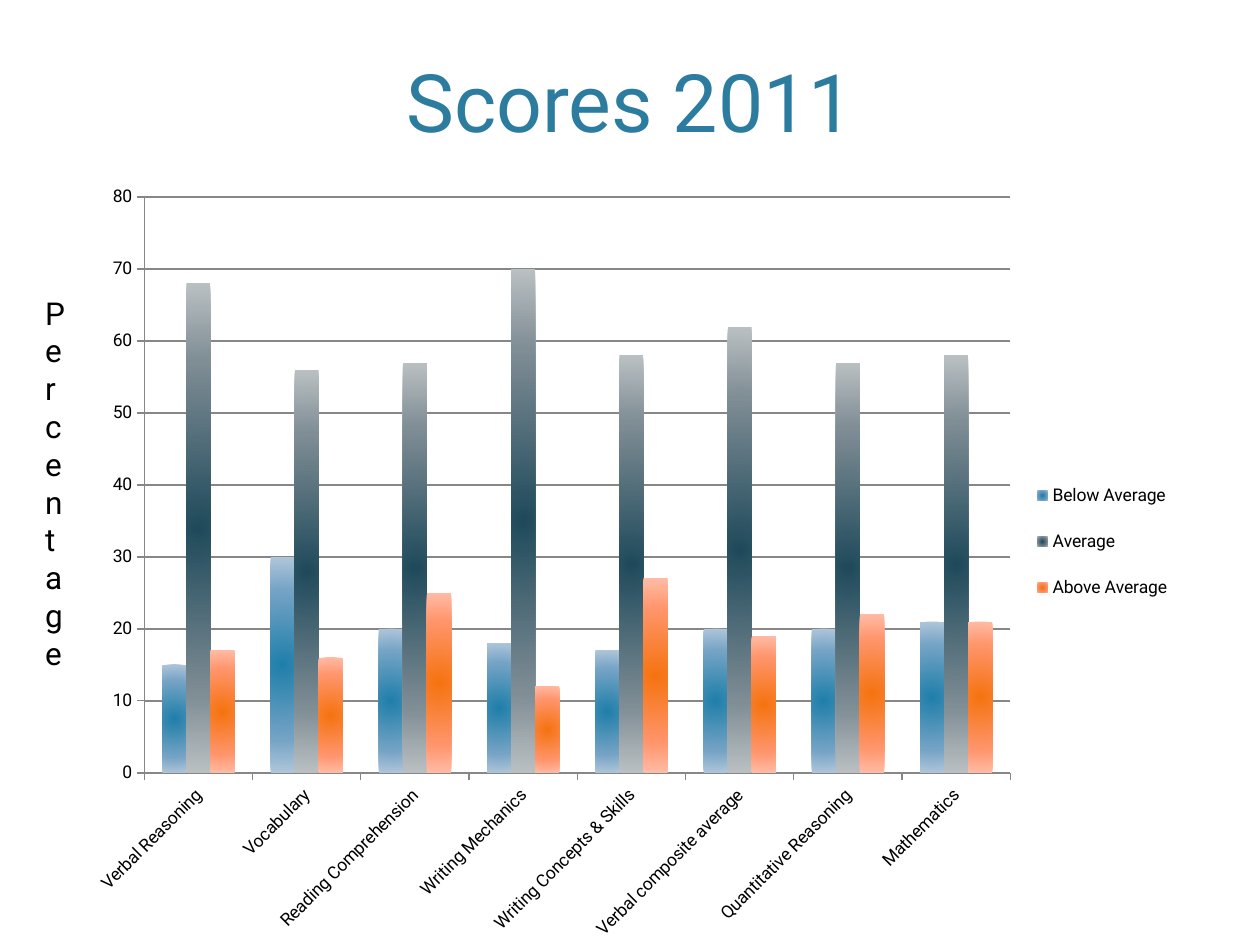
from dataclasses import dataclass

from lxml import etree
from pptx import Presentation
from pptx.chart.chart import Chart
from pptx.chart.data import CategoryChartData
from pptx.chart.series import BarSeries
from pptx.dml.color import RGBColor
from pptx.enum.chart import XL_CHART_TYPE, XL_LEGEND_POSITION, XL_TICK_MARK
from pptx.enum.text import MSO_ANCHOR, MSO_AUTO_SIZE, PP_ALIGN
from pptx.oxml import parse_xml
from pptx.oxml.ns import nsdecls, qn
from pptx.util import Pt

COLUMNS = XL_CHART_TYPE.COLUMN_CLUSTERED
LEGEND_RIGHT = XL_LEGEND_POSITION.RIGHT
TICK_OUTSIDE = XL_TICK_MARK.OUTSIDE
ANCHOR_BOTTOM = MSO_ANCHOR.BOTTOM
FIT_SHAPE = MSO_AUTO_SIZE.SHAPE_TO_FIT_TEXT
CENTER = PP_ALIGN.CENTER
TITLE_ONLY = 5

FONT = "Roboto"
TITLE_COLOR = "2C7C9F"
TEXT_COLOR = "000000"
LINE_COLOR = "878787"

CATEGORIES = [
    "Verbal Reasoning",
    "Vocabulary",
    "Reading Comprehension",
    "Writing Mechanics",
    "Writing Concepts & Skills",
    "Verbal composite average",
    "Quantitative Reasoning",
    "Mathematics",
]


@dataclass(frozen=True)
class Area:
    left: float
    top: float
    width: float
    height: float


@dataclass(frozen=True)
class ScoreBand:
    name: str
    values: tuple[int, ...]
    center: str
    middle: str
    edge: str


TITLE_AREA = Area(43.2, 8.6, 633.6, 79.9)
CHART_AREA = Area(43.2, 97.9, 633.6, 451.4)
PLOT_AREA = Area(82.5, 112.6, 494.9, 329.1)
LEGEND_AREA = Area(585.3, 262.6, 89, 94)
CAPTION_AREA = Area(18.7, 164.2, 26.6, 225.4)

BANDS = [
    ScoreBand("Below Average", (15, 30, 20, 18, 17, 20, 20, 21), "1F7FAA", "74A3C5", "B0C6DA"),
    ScoreBand("Average", (68, 56, 57, 70, 58, 62, 57, 58), "1F4A5B", "7F8D95", "BAC0C2"),
    ScoreBand("Above Average", (17, 16, 25, 12, 27, 19, 22, 21), "F5730F", "FF956B", "FFBCA6"),
]


def rgb(value: str) -> RGBColor:
    return RGBColor.from_string(value)


def bounds(area: Area) -> tuple[Pt, Pt, Pt, Pt]:
    return Pt(area.left), Pt(area.top), Pt(area.width), Pt(area.height)


def style_font(font, size: float, color: str) -> None:
    font.name = FONT
    font.size = Pt(size)
    font.color.rgb = rgb(color)


def fill_radially(series: BarSeries, band: ScoreBand) -> None:
    stops = "".join(
        f'<a:gs pos="{position * 1000}"><a:srgbClr val="{color}"/></a:gs>'
        for position, color in ((0, band.center), (68, band.middle), (100, band.edge))
    )
    gradient = parse_xml(
        f'<a:gradFill rotWithShape="1" {nsdecls("a")}><a:gsLst>{stops}</a:gsLst>'
        '<a:path path="circle"><a:fillToRect l="50000" t="50000" r="50000" b="50000"/>'
        "</a:path></a:gradFill>"
    )
    series.format.fill.solid()
    properties = series.format.fill._xPr
    properties.replace(properties.find(qn("a:solidFill")), gradient)


def place_part(part, area: Area, inner: bool) -> None:
    for old in part.findall(qn("c:layout")):
        part.remove(old)
    layout = etree.Element(qn("c:layout"))
    manual = etree.SubElement(layout, qn("c:manualLayout"))
    settings = [("layoutTarget", "inner")] if inner else []
    settings += [
        ("xMode", "edge"),
        ("yMode", "edge"),
        ("x", (area.left - CHART_AREA.left) / CHART_AREA.width),
        ("y", (area.top - CHART_AREA.top) / CHART_AREA.height),
        ("w", area.width / CHART_AREA.width),
        ("h", area.height / CHART_AREA.height),
    ]
    for name, value in settings:
        etree.SubElement(manual, qn(f"c:{name}")).set("val", str(value))
    part.insert(0 if inner else 1, layout)


def style_axes(chart: Chart) -> None:
    for axis in (chart.category_axis, chart.value_axis):
        axis.major_tick_mark = TICK_OUTSIDE
        axis.format.line.color.rgb = rgb(LINE_COLOR)
        axis.format.line.width = Pt(0.75)
        style_font(axis.tick_labels.font, 10, TEXT_COLOR)
    labels = chart.category_axis._element.find(qn("c:txPr"))
    labels.find(qn("a:bodyPr")).set("rot", str(-45 * 60000))
    scale = chart.value_axis
    scale.minimum_scale, scale.maximum_scale, scale.major_unit = 0, 80, 10
    scale.has_major_gridlines = True
    scale.major_gridlines.format.line.color.rgb = rgb(LINE_COLOR)
    scale.major_gridlines.format.line.width = Pt(1)


def add_score_chart(page) -> None:
    data = CategoryChartData(number_format="General")
    data.categories = CATEGORIES
    for band in BANDS:
        data.add_series(band.name, band.values)
    chart = page.shapes.add_chart(COLUMNS, *bounds(CHART_AREA), data).chart
    chart.has_title = False
    style_font(chart.font, 10, TEXT_COLOR)
    style_axes(chart)
    plot = chart.plots[0]
    plot.gap_width, plot.overlap = 150, 0
    plot.vary_by_categories = False
    for series, band in zip(plot.series, BANDS):
        fill_radially(series, band)
    chart.has_legend = True
    legend = chart.legend
    legend.position = LEGEND_RIGHT
    legend.include_in_layout = False
    style_font(legend.font, 10, TEXT_COLOR)
    place_part(chart._chartSpace.chart.plotArea, PLOT_AREA, inner=True)
    place_part(legend._element, LEGEND_AREA, inner=False)


def set_title(page, text: str) -> None:
    title = page.shapes.title
    title.left, title.top, title.width, title.height = bounds(TITLE_AREA)
    title.text_frame.text = text
    title.text_frame.vertical_anchor = ANCHOR_BOTTOM
    para = title.text_frame.paragraphs[0]
    para.alignment = CENTER
    style_font(para.font, 46, TITLE_COLOR)


def add_axis_caption(page, text: str) -> None:
    box = page.shapes.add_textbox(*bounds(CAPTION_AREA))
    box.text_frame.word_wrap = True
    box.text_frame.auto_size = FIT_SHAPE
    box.text_frame.text = text
    style_font(box.text_frame.paragraphs[0].font, 18, TEXT_COLOR)


def main() -> None:
    deck = Presentation()
    deck.slide_width, deck.slide_height = Pt(720), Pt(540)
    page = deck.slides.add_slide(deck.slide_layouts[TITLE_ONLY])
    set_title(page, "Scores 2011")
    add_score_chart(page)
    add_axis_caption(page, "Percentage")
    deck.save("out.pptx")


if __name__ == "__main__":
    main()
